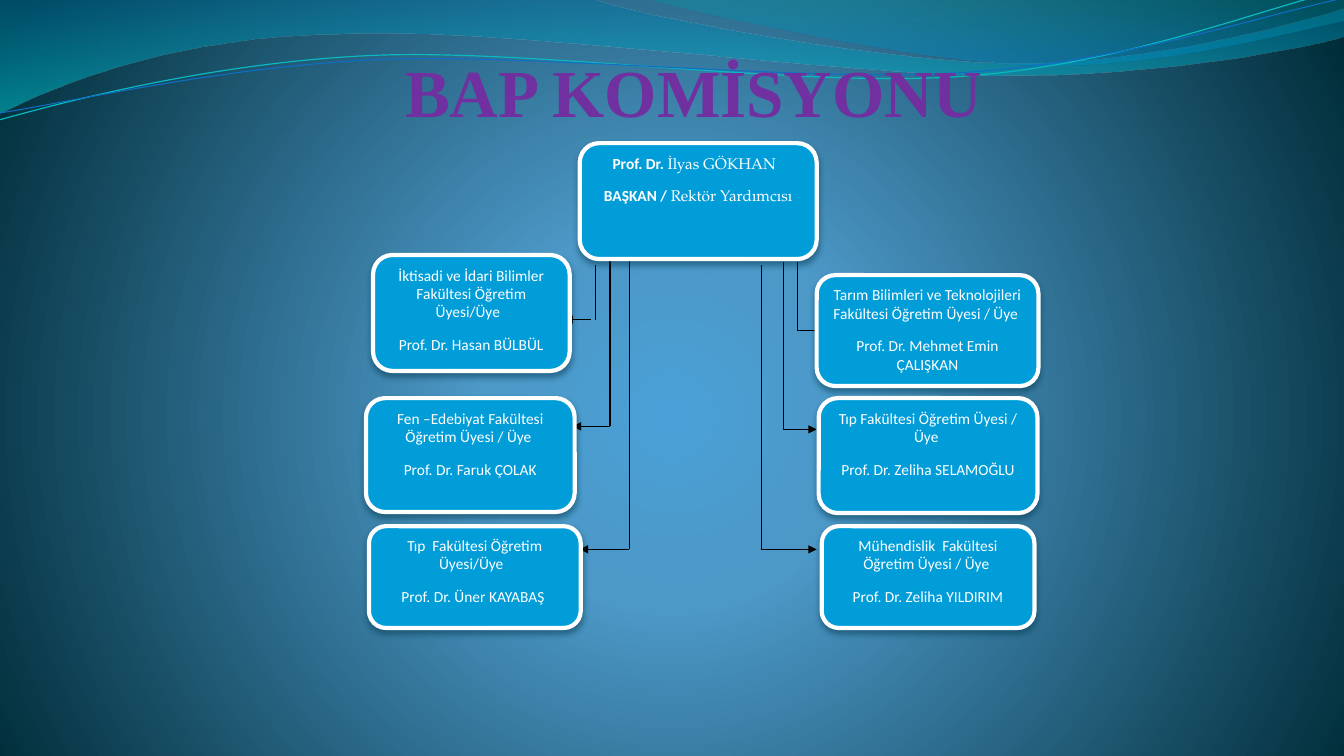
from lxml import etree
from pptx import Presentation
from pptx.dml.color import RGBColor
from pptx.enum.shapes import MSO_CONNECTOR, MSO_SHAPE
from pptx.enum.text import MSO_ANCHOR, PP_ALIGN
from pptx.oxml import parse_xml
from pptx.oxml.ns import nsdecls, qn
from pptx.util import Inches, Pt


def color(value):
    return RGBColor.from_string(value)


def set_gradient(fill, element, stops, direction):
    fill.gradient()
    grad = element.find(".//" + qn("a:gradFill"))
    gs = "".join(
        f'<a:gs pos="{pos * 1000}"><a:srgbClr val="{color(c)}">'
        f'<a:alpha val="{alpha * 1000}"/></a:srgbClr></a:gs>'
        for pos, c, alpha in stops)
    grad.getparent().replace(grad, parse_xml(
        f'<a:gradFill {nsdecls("a")} rotWithShape="1">'
        f'<a:gsLst>{gs}</a:gsLst>{direction}</a:gradFill>'))


prs = Presentation()
prs.slide_width, prs.slide_height = Inches(13.33), Inches(7.5)
s = prs.slides.add_slide(prs.slide_layouts[6])
set_gradient(
    s.background.fill, s._element,
    [(0, "4AA0D6", 100), (25, "4C98C7", 100), (100, "002C38", 100)],
    '<a:path path="circle"><a:fillToRect l="10000" t="110000" r="10000" b="100000"/></a:path>')

waves = [
    ([[(0, 0)], [(5.87, -0.01)],
      [(6.34, 0.17), (8.85, 0.63), (10.11, 0.63)],
      [(11.38, 0.63), (12.78, 0.26), (13.33, 0.09)], [(13.35, 0.36)],
      [(13.11, 0.44), (11.6, 0.76), (9.94, 0.75)],
      [(8.29, 0.75), (5.09, 0.28), (3.43, 0.34)],
      [(1.72, 0.36), (0.61, 0.83), (-0.01, 1.13)]],
     [(0, "0074A1", 45), (100, "00C6CF", 55)], None),
    ([[(6.39, -0.01)], [(6.79, 0.11), (9.09, 0.62), (10.25, 0.65)],
      [(11.41, 0.69), (12.82, 0.32), (13.33, 0.21)], [(13.33, 0)]],
     [(0, "00A1A9", 30), (80, "008BBF", 45)], None),
    ([[(-0.01, 1.19)], [(0.64, 1.01), (2.11, 0.62), (3.69, 0.55)],
      [(5.27, 0.48), (7.9, 0.87), (9.5, 0.76)],
      [(11.1, 0.66), (12.52, 0.08), (13.31, -0.1)]],
     None, ("0AB8BF", 0.85)),
    ([[(0, 1.12)], [(0.63, 1.03), (2.18, 0.66), (3.78, 0.59)],
      [(5.37, 0.53), (7.96, 0.82), (9.55, 0.72)],
      [(11.15, 0.62), (12.55, 0.14), (13.34, -0.02)]],
     None, ("0F6FC6", 0.75)),
]
for segments, stops, line in waves:
    ends = [(Inches(seg[-1][0]), Inches(seg[-1][1])) for seg in segments]
    builder = s.shapes.build_freeform(*ends[0])
    builder.add_line_segments(ends[1:], close=stops is not None)
    sp = builder.convert_to_shape()
    sp.shadow.inherit = False
    for seg, ln in zip(segments[1:], list(sp._element.iter(qn("a:lnTo")))):
        if len(seg) == 3:
            bezier = etree.Element(qn("a:cubicBezTo"))
            for x, y in seg:
                etree.SubElement(bezier, qn("a:pt"), x=str(Inches(x) - sp.left),
                                 y=str(Inches(y) - sp.top))
            ln.getparent().replace(ln, bezier)
    if stops:
        set_gradient(sp.fill, sp._element, stops, '<a:lin ang="5400000" scaled="0"/>')
        sp.line.fill.background()
    else:
        sp.fill.background()
        sp.line.color.rgb, sp.line.width = color(line[0]), Pt(line[1])

title = s.shapes.add_textbox(Inches(0.77), Inches(0.37), Inches(11.33), Inches(0.95))
tf = title.text_frame
tf.word_wrap = True
tf.vertical_anchor = MSO_ANCHOR.BOTTOM
tf.margin_left, tf.margin_bottom = Inches(0.89), Inches(0.02)
tf.margin_top = tf.margin_right = 0
p = tf.paragraphs[0]
p.alignment = PP_ALIGN.CENTER
r = p.add_run()
r.text = "BAP KOMİSYONU"
r.font.name, r.font.size, r.font.bold = "Times New Roman", Pt(48), True
r.font.color.rgb = color("7030A0")

branches = [
    (5.91, 2.63, 3.17, 5.86, 5.6),
    (6.05, 2.56, 4.23, 6.05, 5.68),
    (6.24, 2.56, 5.45, 6.24, 5.75),
    (7.91, 2.6, 3.28, 7.91, 8.17),
    (7.77, 2.6, 4.26, 7.77, 8.1),
    (7.55, 2.63, 5.45, 7.55, 8.1),
]
for x, top, turn, start, tip in branches:
    for x1, y1, x2, y2, arrow in ((x, top, x, turn, False), (start, turn, tip, turn, True)):
        cn = s.shapes.add_connector(MSO_CONNECTOR.STRAIGHT, Inches(x1), Inches(y1),
                                    Inches(x2), Inches(y2))
        cn.line.color.rgb, cn.line.width = color("000000"), Pt(0.75)
        if arrow:
            etree.SubElement(cn.line._get_or_add_ln(), qn("a:tailEnd"), type="triangle")
        etree.SubElement(cn._element.spPr, qn("a:effectLst"))

SANS, SERIF = "Calibri", "TeX Gyre Pagella"
members = [
    (3.63, 3.95, 2.07, 1.13, "Fen –Edebiyat Fakültesi Öğretim Üyesi / Üye ",
     "Prof. Dr. Faruk ÇOLAK"),
    (3.66, 5.22, 2.1, 1.01, "Tıp  Fakültesi Öğretim Üyesi/Üye  ",
     "Prof. Dr. Üner KAYABAŞ "),
    (8.1, 2.73, 2.2, 1.1, "Tarım Bilimleri ve Teknolojileri Fakültesi Öğretim Üyesi / Üye ",
     "Prof. Dr. Mehmet Emin ÇALIŞKAN"),
    (8.12, 3.95, 2.17, 1.14, "Tıp Fakültesi Öğretim Üyesi / Üye ",
     "Prof. Dr. Zeliha SELAMOĞLU"),
    (8.15, 5.22, 2.11, 1.01, "Mühendislik  Fakültesi Öğretim Üyesi / Üye ",
     "Prof. Dr. Zeliha YILDIRIM"),
    (3.7, 2.53, 1.95, 1.15, "İktisadi ve İdari Bilimler Fakültesi Öğretim Üyesi/Üye  ",
     "Prof. Dr. Hasan BÜLBÜL"),
]
boxes = [(box, [[(role, SANS, False)], [(name, SANS, False)]])
         for *box, role, name in members]
boxes.append(((5.75, 1.42, 2.35, 1.15), [
    [("Prof. Dr. ", SANS, True), ("İlyas GÖKHAN  ", SERIF, False)],
    [("BAŞKAN / ", SANS, True), ("Rektör Yardımcısı", SERIF, False)],
]))
for box, paragraphs in boxes:
    sp = s.shapes.add_shape(MSO_SHAPE.ROUNDED_RECTANGLE, *map(Inches, box))
    sp.fill.solid()
    sp.fill.fore_color.rgb = color("009DD9")
    sp.line.color.rgb, sp.line.width = color("FFFFFF"), Pt(3)
    sp._element.spPr.append(parse_xml(
        f'<a:effectLst {nsdecls("a")}><a:outerShdw blurRad="{Pt(4.5)}" dist="{Pt(3)}" '
        f'dir="5400000" rotWithShape="0"><a:srgbClr val="{color("00374C")}">'
        '<a:alpha val="48000"/></a:srgbClr></a:outerShdw></a:effectLst>'))
    tf = sp.text_frame
    tf.word_wrap = True
    tf.vertical_anchor = MSO_ANCHOR.TOP
    for i, runs in enumerate(paragraphs):
        p = tf.add_paragraph() if i else tf.paragraphs[0]
        p.alignment, p.space_after = PP_ALIGN.CENTER, Pt(10)
        for text, font, bold in runs:
            r = p.add_run()
            r.text = text
            r.font.name, r.font.size, r.font.bold = font, Pt(11), bold
            r.font.color.rgb = color("FFFFFF")

prs.save("out.pptx")
